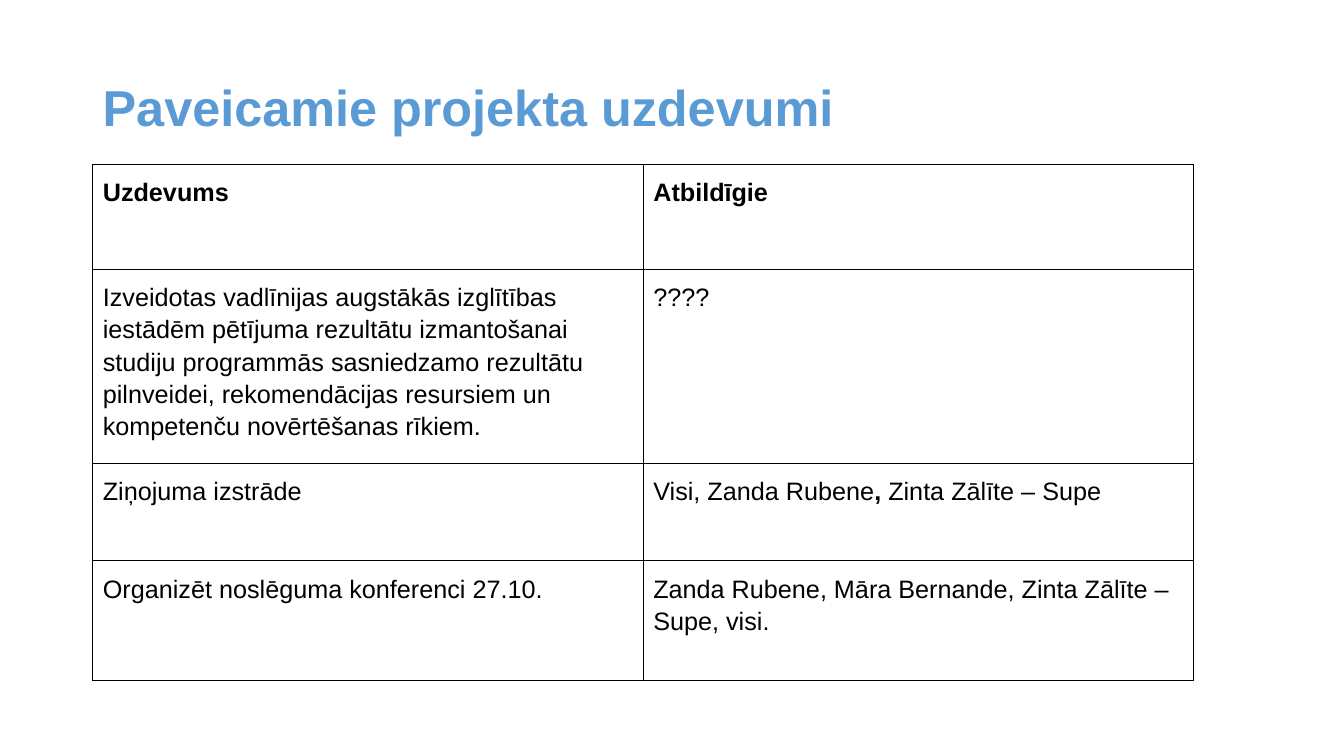
from lxml.etree import SubElement
from pptx import Presentation
from pptx.dml.color import RGBColor
from pptx.enum.text import MSO_ANCHOR, PP_ALIGN
from pptx.oxml.ns import qn
from pptx.util import Inches, Pt

COLORS = {"title": "5B9BD5", "text": "000000", "border": "000000"}
FONT = "Arial"
ROW_HEIGHTS = [1.04, 1.84, 0.97, 1.19]
TASKS = [
    ("Uzdevums", "Atbildīgie"),
    (
        "Izveidotas vadlīnijas augstākās izglītības iestādēm pētījuma rezultātu "
        "izmantošanai studiju programmās sasniedzamo rezultātu pilnveidei, "
        "rekomendācijas resursiem un kompetenču novērtēšanas rīkiem.",
        "????",
    ),
    ("Ziņojuma izstrāde", ["Visi, Zanda Rubene", ", ", "Zinta Zālīte – Supe"]),
    (
        "Organizēt noslēguma konferenci 27.10.",
        "Zanda Rubene, Māra Bernande, Zinta Zālīte – Supe, visi.",
    ),
]


def style_font(font, size, color):
    """Set the typeface, size and colour of a font."""
    font.name = FONT
    font.size = Pt(size)
    font.color.rgb = RGBColor.from_string(COLORS[color])


def add_title(slide, left, top, width, height):
    """Place the slide title in the given box."""
    frame = slide.shapes.add_textbox(
        Inches(left), Inches(top), Inches(width), Inches(height)
    ).text_frame
    frame.word_wrap = True
    frame.vertical_anchor = MSO_ANCHOR.MIDDLE
    frame.margin_bottom = Inches(0.12)
    paragraph = frame.paragraphs[0]
    paragraph.text = "Paveicamie projekta uzdevumi"
    paragraph.line_spacing = 0.9
    paragraph.font.bold = True
    style_font(paragraph.font, 36, "title")


def add_borders(cell):
    """Draw a thin line on all four sides of a table cell."""
    properties = cell._tc.get_or_add_tcPr()
    for side in ("lnL", "lnR", "lnT", "lnB"):
        line = SubElement(properties, qn(f"a:{side}"), w=str(Pt(0.75)))
        fill = SubElement(line, qn("a:solidFill"))
        SubElement(fill, qn("a:srgbClr"), val=COLORS["border"])


def fill_cell(cell, content, is_header):
    """Write and format one cell; in a list, every second run is bold."""
    add_borders(cell)
    cell.fill.background()
    cell.margin_left = cell.margin_right = Inches(0.1)
    cell.margin_top = cell.margin_bottom = Inches(0.1)
    paragraph = cell.text_frame.paragraphs[0]
    paragraph.line_spacing = 1.15
    paragraph.font.bold = is_header
    style_font(paragraph.font, 18, "text")
    if isinstance(content, str):
        paragraph.text = content
        return
    for index, text in enumerate(content):
        run = paragraph.add_run()
        run.text = text
        run.font.bold = index % 2 == 1


def add_task_table(slide, left, top, width, height):
    """Place the table of tasks and responsible people in the given box."""
    table = slide.shapes.add_table(
        len(TASKS), 2, Inches(left), Inches(top), Inches(width), Inches(height)
    ).table
    table.first_row = False
    table.horz_banding = False
    for row_index, (row, height_inches) in enumerate(zip(table.rows, ROW_HEIGHTS)):
        row.height = Inches(height_inches)
        for cell, content in zip(row.cells, TASKS[row_index]):
            fill_cell(cell, content, row_index == 0)
    table.cell(2, 0).text_frame.paragraphs[0].alignment = PP_ALIGN.JUSTIFY


def main():
    """Build the slide and save the presentation."""
    presentation = Presentation()
    presentation.slide_width = Inches(13.33)
    presentation.slide_height = Inches(7.5)
    slide = presentation.slides.add_slide(presentation.slide_layouts[6])
    add_title(slide, 0.92, 0.4, 11.5, 1.45)
    add_task_table(slide, 0.92, 1.63, 10.92, sum(ROW_HEIGHTS))
    presentation.save("out.pptx")


if __name__ == "__main__":
    main()
